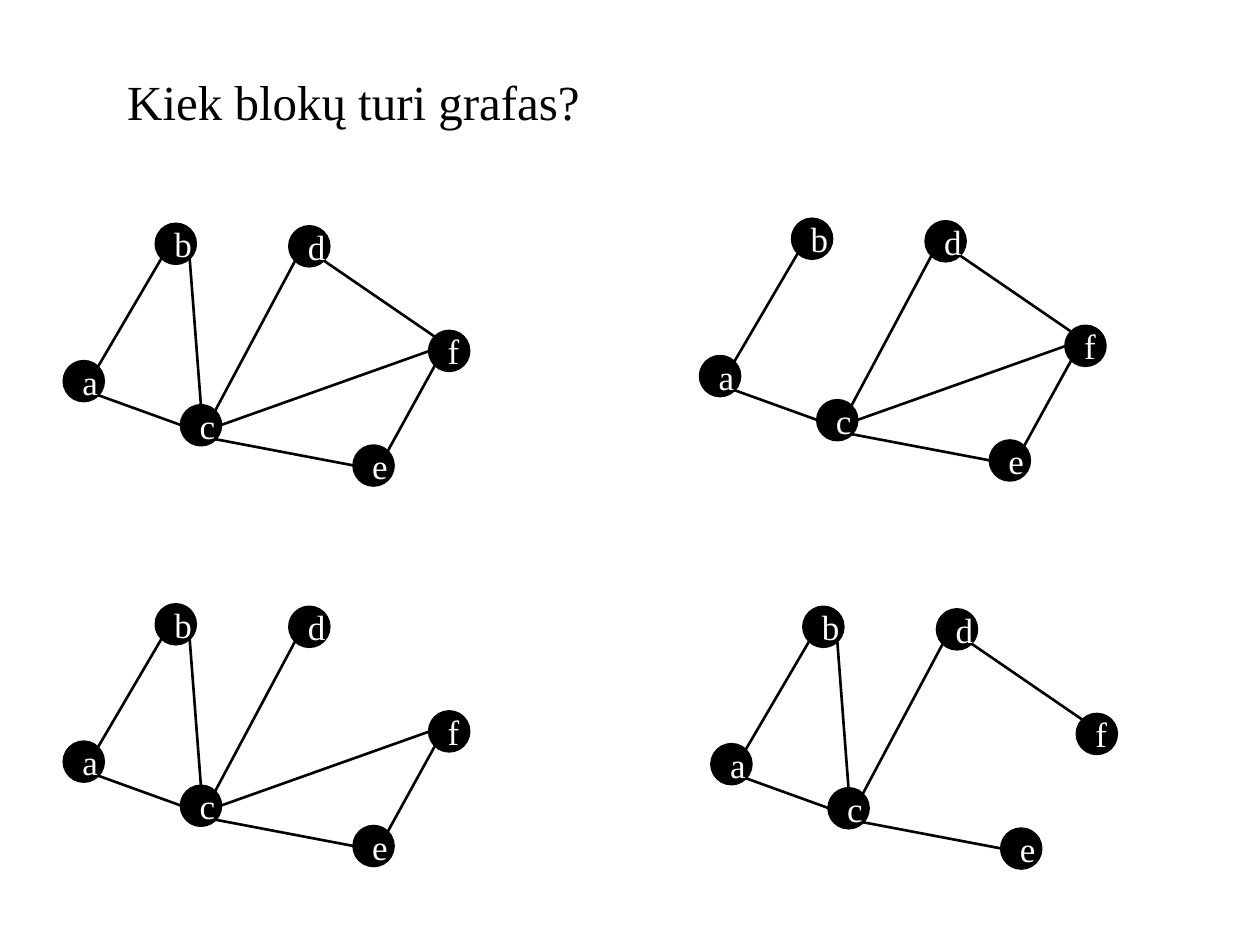
from pptx import Presentation
from pptx.dml.color import RGBColor
from pptx.enum.shapes import MSO_CONNECTOR, MSO_SHAPE
from pptx.enum.text import MSO_ANCHOR, MSO_AUTO_SIZE, PP_ALIGN
from pptx.oxml.ns import qn
from pptx.util import Inches, Pt
from lxml import etree

BLACK = RGBColor(0x00, 0x00, 0x00)
WHITE = RGBColor(0xFF, 0xFF, 0xFF)
TITLE_FONT = {"size": Pt(28), "name": "Times New Roman"}
LABEL_FONT = {"size": Pt(20), "name": "Times New Roman"}

DIAMETER = 0.31
DIAGONAL = 0.11  # horizontal and vertical reach of a diagonal rim point

# Vertex positions relative to the graph's top left corner
VERTICES = {
    "a": (0, 1.09), "b": (0.73, 0), "c": (0.93, 1.44),
    "d": (1.79, 0.02), "e": (2.3, 1.76), "f": (2.9, 0.85),
}

# Rim points as offsets from a vertex centre
RIM = {
    "top": (0, -DIAMETER / 2), "left": (-DIAMETER / 2, 0), "right": (DIAMETER / 2, 0),
    "top left": (-DIAGONAL, -DIAGONAL), "top right": (DIAGONAL, -DIAGONAL),
    "bottom left": (-DIAGONAL, DIAGONAL), "bottom right": (DIAGONAL, DIAGONAL),
}

# Rim points at which each edge leaves and arrives
EDGES = {
    "ab": ("top right", "bottom left"), "ac": ("bottom right", "left"),
    "bc": ("bottom right", "top"), "cd": ("top right", "bottom left"),
    "ce": ("bottom right", "left"), "cf": ("right", "left"),
    "df": ("bottom right", "top left"), "ef": ("top right", "bottom left"),
}

# Each graph: left, top, edges left out
GRAPHS = [
    (0.51, 1.78, ()),
    (5.56, 1.74, ("bc",)),
    (0.51, 4.8, ("df",)),
    (5.65, 4.82, ("cf", "ef")),
]


def format_font(font, values, color):
    for attribute, value in values.items():
        setattr(font, attribute, value)
    font.color.rgb = color


presentation = Presentation()
presentation.slide_width, presentation.slide_height = Inches(10), Inches(7.5)
slide = presentation.slides.add_slide(presentation.slide_layouts[5])

# Question
question = slide.shapes.title
question.left, question.top = Inches(0.91), Inches(0.52)
question.width, question.height = Inches(8.27), Inches(0.57)
question_frame = question.text_frame
question_frame.text = "Kiek blokų turi grafas?"
question_frame.vertical_anchor = MSO_ANCHOR.TOP
question_frame.auto_size = MSO_AUTO_SIZE.SHAPE_TO_FIT_TEXT
question_frame.paragraphs[0].alignment = PP_ALIGN.LEFT
format_font(question_frame.paragraphs[0].runs[0].font, TITLE_FONT, BLACK)

for left, top, missing in GRAPHS:
    graph = slide.shapes.add_group_shape()

    # Edges
    for ends, rim_points in EDGES.items():
        if ends in missing:
            continue
        points = []
        for vertex, rim_point in zip(ends, rim_points):
            x, y = VERTICES[vertex]
            dx, dy = RIM[rim_point]
            points += [Inches(left + x + DIAMETER / 2 + dx),
                       Inches(top + y + DIAMETER / 2 + dy)]
        edge = graph.shapes.add_connector(MSO_CONNECTOR.STRAIGHT, *points)
        edge.line.color.rgb = BLACK
        edge.line.width = Pt(1.5)
        etree.SubElement(edge._element.spPr, qn("a:effectLst"))

    # Vertices
    for letter, (x, y) in VERTICES.items():
        vertex = graph.shapes.add_shape(
            MSO_SHAPE.OVAL, Inches(left + x), Inches(top + y),
            Inches(DIAMETER), Inches(DIAMETER))
        vertex.shadow.inherit = False
        vertex.fill.solid()
        vertex.fill.fore_color.rgb = BLACK
        vertex.line.color.rgb = BLACK
        vertex.line.width = Pt(2)
        label = vertex.text_frame
        label.text = letter
        label.word_wrap = True
        label.vertical_anchor = MSO_ANCHOR.MIDDLE
        label.paragraphs[0].alignment = PP_ALIGN.CENTER
        format_font(label.paragraphs[0].runs[0].font, LABEL_FONT, WHITE)

presentation.save("out.pptx")
